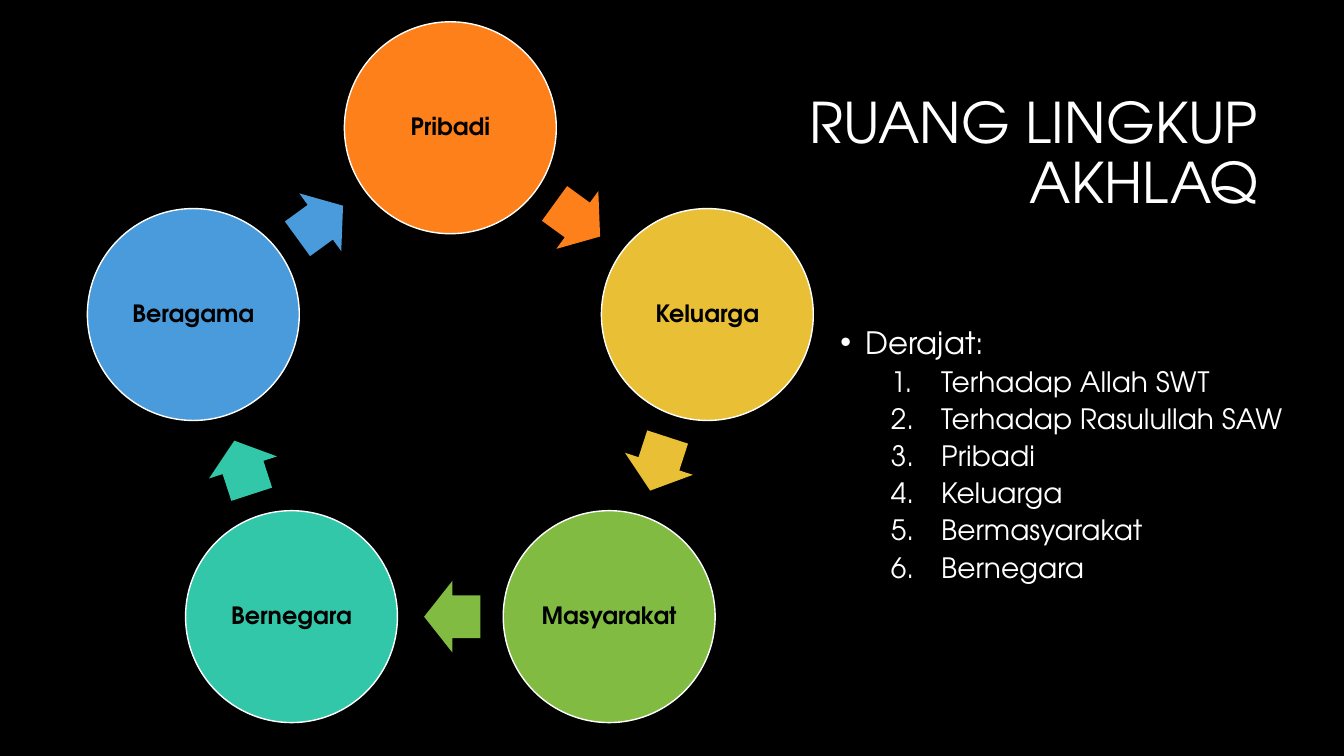
from math import cos, radians, sin

from lxml import etree
from pptx import Presentation
from pptx import util as u
from pptx.dml.color import RGBColor
from pptx.enum import shapes, text
from pptx.oxml.ns import qn

CYCLE = [("Pribadi", "FE801A"), ("Keluarga", "E9BF35"), ("Masyarakat", "81BB42"),
         ("Bernegara", "32C7A9"), ("Beragama", "4A9BDC")]
RANKS = ["Terhadap Allah SWT", "Terhadap Rasulullah SAW", "Pribadi",
         "Keluarga", "Bermasyarakat", "Bernegara"]
MID_X, MID_Y = 11.35, 10.03


def color(code):
    return RGBColor.from_string(code)


def put(item, values):
    for name, value in values.items():
        setattr(item, name, value)


def orbit(angle, radius):
    """Point on the cycle, clockwise from the top."""
    turn = radians(angle)
    return MID_X + radius * sin(turn), MID_Y - radius * cos(turn)


class Deck:
    font = "TeX Gyre Adventor"
    white, black = "FFFFFF", "000000"

    def __init__(self, wide, high):
        self.prs = Presentation()
        put(self.prs, {"slide_width": u.Cm(wide), "slide_height": u.Cm(high)})
        self.slide = self.prs.slides.add_slide(self.prs.slide_layouts[5])
        fill = self.slide.background.fill
        fill.solid()
        fill.fore_color.rgb = color(self.black)

    def place(self, item, x, y, wide, high):
        put(item, {"left": u.Cm(x), "top": u.Cm(y),
                   "width": u.Cm(wide), "height": u.Cm(high)})

    def frame(self, item, anchor, inset=None):
        frame = item.text_frame
        put(frame, {"word_wrap": True, "auto_size": text.MSO_AUTO_SIZE.NONE,
                    "vertical_anchor": anchor})
        if inset is not None:
            put(frame, {"margin_" + side: u.Cm(inset)
                        for side in ("left", "right", "top", "bottom")})
        return frame

    def label(self, para, words, size, tone, align, bold=False):
        run = para.add_run()
        run.text = words
        put(para, {"alignment": align, "line_spacing": 0.9})
        put(run.font, {"name": self.font, "size": u.Pt(size), "bold": bold})
        run.font.color.rgb = color(tone)

    def title(self, words, *box):
        item = self.slide.shapes.title
        self.place(item, *box)
        frame = self.frame(item, text.MSO_ANCHOR.MIDDLE)
        self.label(frame.paragraphs[0], words, 40, self.white, text.PP_ALIGN.RIGHT)

    def shape(self, kind, x, y, wide, high, tone):
        item = self.slide.shapes.add_shape(
            kind, u.Cm(x - wide / 2), u.Cm(y - high / 2), u.Cm(wide), u.Cm(high))
        item.shadow.inherit = False
        item.fill.solid()
        item.fill.fore_color.rgb = color(tone)
        return item

    def circle(self, words, x, y, size, tone):
        item = self.shape(shapes.MSO_SHAPE.OVAL, x, y, size, size, tone)
        item.line.color.rgb = color(self.white)
        item.line.width = u.Pt(1)
        frame = self.frame(item, text.MSO_ANCHOR.MIDDLE, 0.05)
        self.label(frame.paragraphs[0], words, 17, self.black,
                   text.PP_ALIGN.CENTER, True)

    def arrow(self, x, y, angle, tone):
        item = self.shape(shapes.MSO_SHAPE.RIGHT_ARROW, x, y, 1.42, 1.8, tone)
        item.line.fill.background()
        item.adjustments[0], item.adjustments[1] = 0.6, 0.5
        item.rotation = angle

    def mark(self, para, left, hang, face, tag, **attrs):
        props = para._p.get_or_add_pPr()
        props.set("marL", str(u.Cm(left)))
        props.set("indent", str(-u.Cm(hang)))
        etree.SubElement(props, qn("a:buFont")).set("typeface", face)
        etree.SubElement(props, qn(tag), attrs)

    def list(self, head, items, *box):
        item = self.slide.shapes.add_textbox(0, 0, 0, 0)
        self.place(item, *box)
        frame = self.frame(item, text.MSO_ANCHOR.TOP)
        para = frame.paragraphs[0]
        self.mark(para, 0.64, 0.64, "Arial", "a:buChar", char="•")
        self.label(para, head, 22, self.white, text.PP_ALIGN.LEFT)
        for words in items:
            para = frame.add_paragraph()
            self.mark(para, 2.54, 1.27, self.font, "a:buAutoNum", type="arabicPeriod")
            put(para, {"level": 1, "space_before": u.Pt(5)})
            self.label(para, words, 20, self.white, text.PP_ALIGN.LEFT)


def main():
    deck = Deck(33.87, 19.05)
    deck.title("RUANG LINGKUP AKHLAQ", 14.96, 2.13, 17, 3.58)

    # Cycle of circles and arrows
    step = 360 / len(CYCLE)
    for i, (name, tone) in enumerate(CYCLE):
        deck.circle(name, *orbit(i * step, 6.81), 5.34, tone)
        turn = (i + 0.5) * step
        deck.arrow(*orbit(turn - 0.5, 5.51), turn, tone)

    # Numbered ranks
    deck.list("Derajat:", RANKS, 20.93, 8.13, 12.32, 9.14)
    deck.prs.save("out.pptx")


if __name__ == "__main__":
    main()
